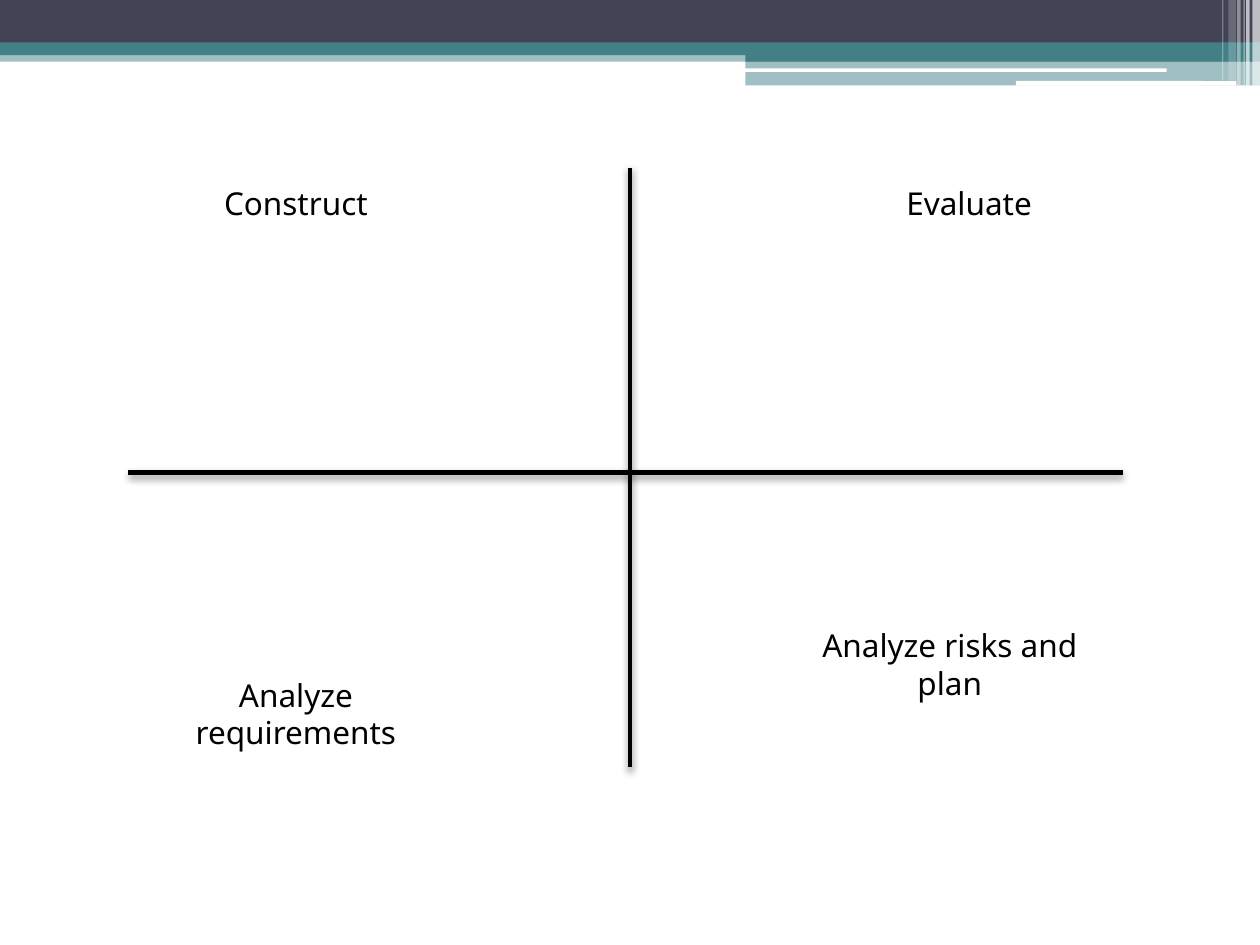
from lxml import etree
from pptx import Presentation
from pptx.dml.color import RGBColor
from pptx.enum import shapes, text
from pptx.oxml import ns
from pptx.util import Pt

SLATE = RGBColor(0x42, 0x44, 0x56)
TEAL = RGBColor(0x43, 0x80, 0x86)
WHITE = RGBColor(0xFF, 0xFF, 0xFF)
BLACK = RGBColor(0, 0, 0)


def add_percent(parent, tag, percent):
    etree.SubElement(parent, ns.qn(tag), val=str(percent * 1000))


def add_bar(kind, left, top, width, height, color, opacity=100):
    bar = slide.shapes.add_shape(kind, Pt(left), Pt(top), Pt(width), Pt(height))
    bar.shadow.inherit = False
    bar.fill.solid()
    bar.fill.fore_color.rgb = color
    bar.line.fill.background()
    if opacity < 100:
        add_percent(bar.fill._xPr.find(".//" + ns.qn("a:srgbClr")), "a:alpha", opacity)
    return bar


deck = Presentation()
deck.slide_width, deck.slide_height = Pt(720), Pt(540)
slide = deck.slides.add_slide(deck.slide_layouts[6])

# Header bands: left, top, width, height, colour, opacity
RECT = shapes.MSO_SHAPE.RECTANGLE
bands = [
    (0, 28.8, 720, 6.5, TEAL, 50),
    (0, 0, 720, 24.5, SLATE, 100),
    (0, 24.3, 720, 7.2, TEAL, 100),
    (426, 28.3, 294, 7, TEAL, 100),
    (426, 34.6, 294, 14.2, TEAL, 50),
]
for band in bands:
    add_bar(RECT, *band)

# White rules in the header
for left, top, width, height in [(425.5, 39.1, 241.2, 2), (580.5, 46.3, 126, 2.7)]:
    add_bar(shapes.MSO_SHAPE.ROUNDED_RECTANGLE, left, top, width, height, WHITE)

# Translucent stripes at the right edge: left, width, height, opacity
stripes = [
    (715.7, 4.3, 49, 65),
    (712.1, 2, 49, 65),
    (710.6, 0.7, 49, 60),
    (707, 2, 49, 40),
    (702, 4.3, 46.1, 20),
    (698.4, 0.7, 46.1, 30),
]
for left, width, height, opacity in stripes:
    add_bar(RECT, left, 0, width, height, WHITE, opacity)

# Crossing axes with a soft shadow below
for x1, y1, x2, y2 in [(360, 95.8, 360, 438.5), (73.4, 270, 641.5, 270)]:
    axis = slide.shapes.add_connector(
        shapes.MSO_CONNECTOR.STRAIGHT, Pt(x1), Pt(y1), Pt(x2), Pt(y2))
    axis.line.color.rgb = BLACK
    axis.line.width = Pt(2.5)
    effects = etree.SubElement(axis._element.spPr, ns.qn("a:effectLst"))
    shadow = etree.SubElement(
        effects, ns.qn("a:outerShdw"), blurRad=str(Pt(4)), dist=str(Pt(2)),
        dir="5400000", rotWithShape="0")
    shadow_color = etree.SubElement(shadow, ns.qn("a:srgbClr"), val=str(BLACK))
    add_percent(shadow_color, "a:alpha", 45)

# Quadrant labels: wording, left, top, width, height, anchor
TOP, MIDDLE = text.MSO_ANCHOR.TOP, text.MSO_ANCHOR.MIDDLE
labels = [
    ("Analyze risks and plan", 444.5, 354.3, 196.5, 51, TOP),
    ("Evaluate", 466.6, 101.5, 174.4, 29, TOP),
    ("Analyze requirements", 73.4, 382.5, 191.5, 51, TOP),
    ("Construct", 73.4, 101.5, 191.5, 29, MIDDLE),
]
label_font = {"name": "Noto Sans", "size": Pt(18)}
for wording, left, top, width, height, anchor in labels:
    label = slide.shapes.add_textbox(Pt(left), Pt(top), Pt(width), Pt(height))
    frame = label.text_frame
    frame.word_wrap = True
    frame.auto_size = text.MSO_AUTO_SIZE.SHAPE_TO_FIT_TEXT
    frame.vertical_anchor = anchor
    paragraph = frame.paragraphs[0]
    paragraph.alignment = text.PP_ALIGN.CENTER
    run = paragraph.add_run()
    run.text = wording
    for attribute, value in label_font.items():
        setattr(run.font, attribute, value)
    run.font.color.rgb = BLACK

deck.save("out.pptx")
